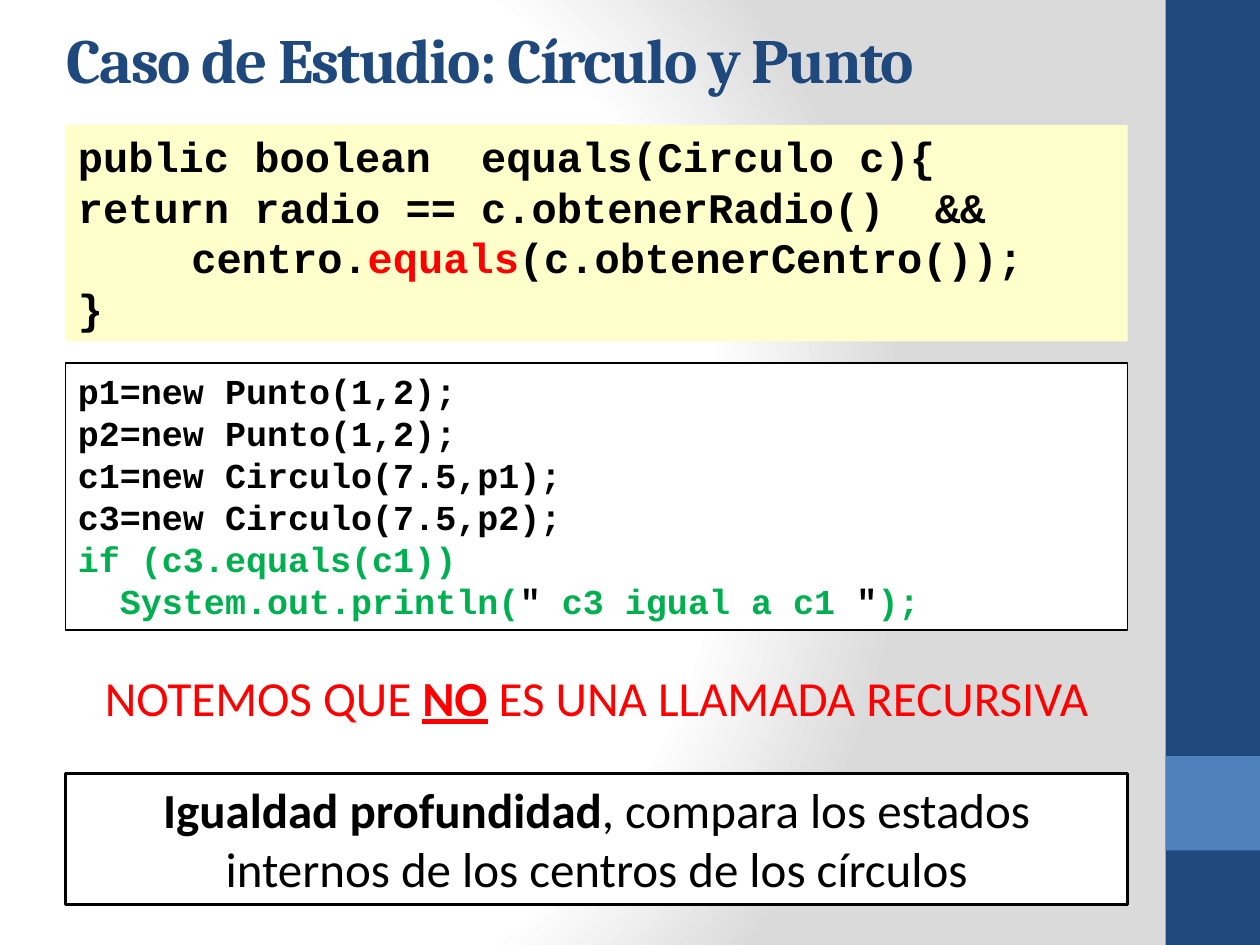
from dataclasses import dataclass

from pptx import Presentation
from pptx.dml.color import RGBColor
from pptx.enum.shapes import MSO_SHAPE as Shape
from pptx.enum.text import MSO_ANCHOR as Anchor, MSO_AUTO_SIZE as AutoSize, PP_ALIGN as Align
from pptx.oxml import parse_xml
from pptx.oxml.ns import nsdecls
from pptx.util import Pt

PX = 9144  # EMU per px, 100 px to the inch


@dataclass(frozen=True)
class Theme:
    navy: str = "1F497D"
    blue: str = "4F81BD"
    cream: str = "FFFFCC"
    white: str = "FFFFFF"
    grey: str = "DADADA"
    black: str = "000000"
    red: str = "FF0000"
    green: str = "00B050"
    heading: str = "Cambria"
    body: str = "Calibri"
    code: str = "Courier New"
    title_size: int = 36
    method_size: int = 24
    usage_size: int = 20
    note_size: int = 28


theme = Theme()


def add_box(left, top, width, height, fill=None, line=None, line_width=1):
    shape = slide.shapes.add_shape(
        Shape.RECTANGLE, left * PX, top * PX, width * PX, height * PX)
    shape.shadow.inherit = False
    if fill:
        shape.fill.solid()
        shape.fill.fore_color.rgb = RGBColor.from_string(fill)
    else:
        shape.fill.background()
    if line:
        shape.line.color.rgb = RGBColor.from_string(line)
        shape.line.width = Pt(line_width)
    else:
        shape.line.fill.background()
    return shape


def write(shape, lines, font, size, align=Align.LEFT, anchor=Anchor.TOP):
    """Each line is a list of runs: (text, colour, bold, underline)."""
    frame = shape.text_frame
    frame.word_wrap = True
    frame.auto_size = AutoSize.NONE
    frame.vertical_anchor = anchor
    for index, runs in enumerate(lines):
        paragraph = frame.paragraphs[0] if index == 0 else frame.add_paragraph()
        paragraph.alignment = align
        for text, colour, bold, underline in runs:
            run = paragraph.add_run()
            run.text = text
            run.font.name = font
            run.font.size = Pt(size)
            run.font.bold = bold
            run.font.underline = underline
            run.font.color.rgb = RGBColor.from_string(colour)


presentation = Presentation()
presentation.slide_width = 1000 * PX
presentation.slide_height = 750 * PX
slide = presentation.slides.add_slide(presentation.slide_layouts[5])

# Background: radial gradient
slide.background.fill.solid()
solid = slide.element.xpath("p:cSld/p:bg/p:bgPr/a:solidFill")[0]
stops = "".join(
    f'<a:gs pos="{position * 1000}"><a:srgbClr val="{colour}"/></a:gs>'
    for position, colour in ((0, theme.white), (75, theme.white), (100, theme.grey)))
solid.getparent().replace(solid, parse_xml(
    f'<a:gradFill {nsdecls("a")} rotWithShape="1"><a:gsLst>{stops}</a:gsLst>'
    '<a:path path="circle"><a:fillToRect l="20000" t="50000" r="100000" b="50000"/></a:path>'
    '</a:gradFill>'))

# Side band
add_box(925, 0, 75, 750, theme.navy)
add_box(925, 600, 75, 75, theme.blue)

# Title
title = slide.shapes.title
title.left, title.top, title.width, title.height = (
    value * PX for value in (43, 5, 825, 76))
write(title, [[("Caso de Estudio: Círculo y Punto", theme.navy, True, False)]],
      theme.heading, theme.title_size, anchor=Anchor.BOTTOM)
title.text_frame.paragraphs[0].runs[0].font._element.set("spc", "-100")

# Method code
method = add_box(52, 99, 843, 172, theme.cream)
write(method, [
    [("public boolean  equals(Circulo c){", theme.black, True, False)],
    [("return radio == c.obtenerRadio()  &&", theme.black, True, False)],
    [(" \t  centro.", theme.black, True, False),
     ("equals", theme.red, True, False),
     ("(c.obtenerCentro());", theme.black, True, False)],
    [("}", theme.black, True, False)],
], theme.code, theme.method_size)

# Remark
remark = add_box(72, 525, 803, 57)
write(remark, [[
    ("NOTEMOS QUE ", theme.red, False, False),
    ("NO", theme.red, True, True),
    (" ES UNA LLAMADA RECURSIVA", theme.red, False, False),
]], theme.body, theme.note_size, Align.CENTER)

# Usage code
usage = add_box(52, 288, 843, 212, theme.white, theme.black, 0.75)
write(usage, [
    [("p1=new Punto(1,2);", theme.black, True, False)],
    [("p2=new Punto(1,2);", theme.black, True, False)],
    [("c1=new Circulo(7.5,p1);", theme.black, True, False)],
    [("c3=new Circulo(7.5,p2);", theme.black, True, False)],
    [("if (c3.equals(c1))", theme.green, True, False)],
    [("  System.out.println(", theme.green, True, False),
     ("\" ", theme.black, True, False),
     ("c3 igual a c1", theme.green, True, False),
     (" \"", theme.black, True, False),
     (");", theme.green, True, False)],
], theme.code, theme.usage_size)

# Conclusion
conclusion = add_box(52, 614, 843, 104, theme.white, theme.black, 2)
write(conclusion, [[
    ("Igualdad profundidad", theme.black, True, False),
    (", compara los estados internos de los centros de los círculos",
     theme.black, False, False),
]], theme.body, theme.note_size, Align.CENTER)

presentation.save("out.pptx")
